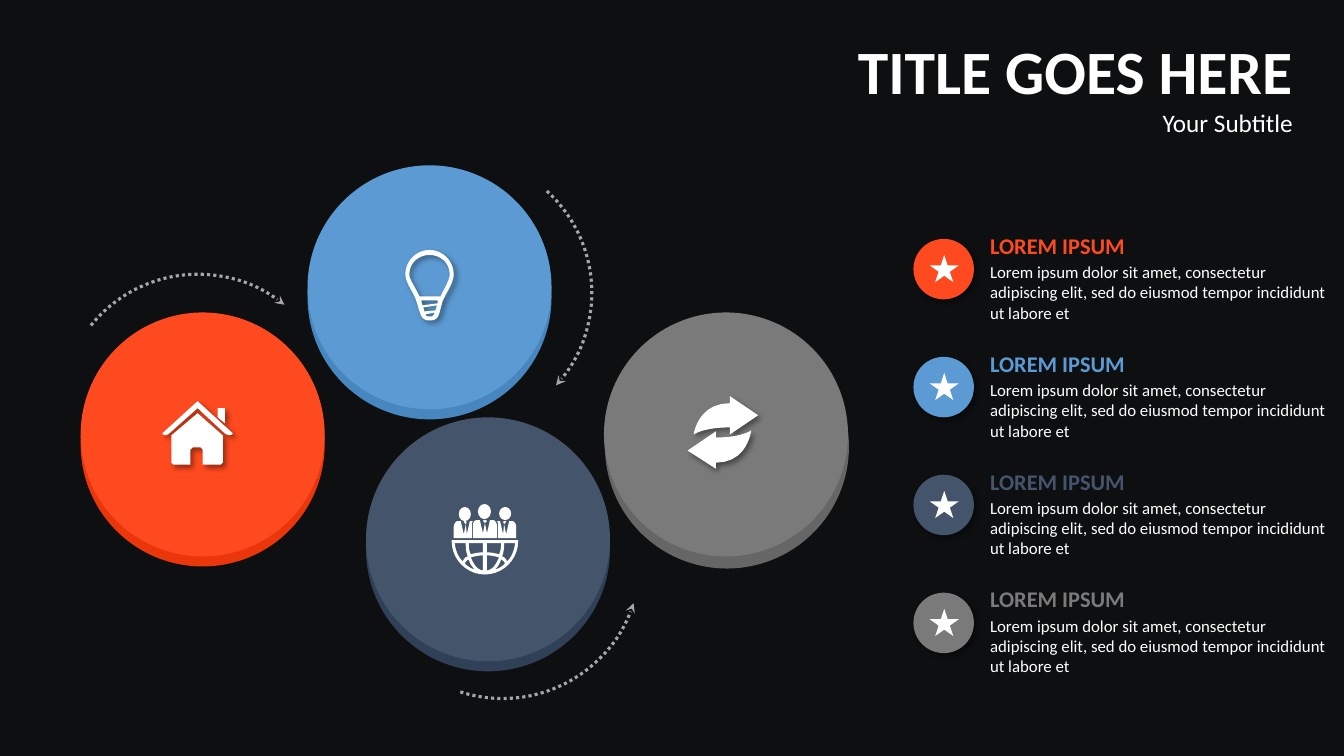
import collections

import lxml.etree
import pptx
import pptx.dml.color
import pptx.enum.dml
import pptx.enum.shapes
import pptx.enum.text
import pptx.oxml.ns
import pptx.util

Inches = pptx.util.Inches
Pt = pptx.util.Pt
qn = pptx.oxml.ns.qn
SHAPES = pptx.enum.shapes.MSO_SHAPE
Box = collections.namedtuple("Box", "left top width height")

COLORS = {
    "background": "0E0F11", "white": "FFFFFF", "arrow": "A6A6A6", "black": "000000",
    "orange": "FE4A1E", "orange_edge": "EA360A",
    "blue": "5C9AD3", "blue_edge": "4886BF",
    "navy": "44546B", "navy_edge": "304057",
    "gray": "7A7A7A", "gray_edge": "666666",
}
FONT = "Calibri"
BODY = ("Lorem ipsum dolor sit amet, consectetur adipiscing elit, "
        "sed do eiusmod tempor incididunt ut labore et")

# Outlines are in hundredths of an inch: pairs are corners, sextuples are Bezier curves.
HOUSE = [
    [(9, 34), (9, 61), (11, 63), (28, 63), (28, 48), (30, 46), (38, 46), (40, 48),
     (40, 63), (58, 63), (60, 61), (60, 34), (35, 12)],
    [(62, 7), (55, 7), (55, 16), (62, 22)],
    [(0, 32), (0, 32, 2, 36, 7, 32), (35, 7), (62, 32), (68, 36, 70, 32, 70, 32), (35, 0)],
]
CYCLE = [
    [(28, 72), (28, 66), (60, 66, 63, 34, 63, 34), (63, 34, 54, 41, 28, 41), (28, 35), (0, 54)],
    [(42, 0), (42, 7), (10, 7, 6, 38, 6, 38), (6, 38, 16, 31, 42, 31), (42, 38), (70, 19)],
]
BULB = [
    [(24, 0), (11, 0, 0, 11, 0, 24), (0, 33, 9, 43, 11, 51), (15, 63, 15, 70, 24, 70),
     (34, 70, 33, 64, 37, 51), (40, 43, 48, 33, 48, 24), (48, 11, 37, 0, 24, 0)],
    [(30, 60), (19, 61), (19, 60, 18, 59, 18, 57), (31, 55), (31, 56, 31, 57, 30, 60)],
    [(17, 55), (17, 54, 16, 53, 16, 50), (32, 50), (32, 53)],
    [(24, 66), (22, 66, 21, 66, 20, 64), (29, 62), (28, 66, 27, 66, 24, 66)],
    [(35, 46), (14, 46), (13, 44, 12, 42, 11, 40), (8, 34, 4, 29, 4, 24),
     (4, 13, 13, 5, 24, 5), (35, 5, 44, 13, 44, 24), (44, 29, 41, 34, 38, 40),
     (37, 42, 36, 44, 35, 46)],
]
GLOBE_RIM = [[(66, 0), (0, 0), (0, 1), (0, 19, 15, 34, 33, 34), (51, 34, 66, 19, 66, 1)]]
GLOBE_CELLS = [
    [(11, 21), (6, 16, 4, 10, 3, 3), (14, 3), (14, 7, 14, 11, 16, 16), (13, 17, 12, 19, 11, 21)],
    [(13, 23), (14, 21, 15, 20, 17, 19), (18, 23, 20, 26, 23, 29), (19, 28, 16, 26, 13, 23)],
    [(31, 30), (25, 29, 22, 24, 19, 17), (23, 16, 27, 15, 31, 15)],
    [(31, 12), (27, 12, 22, 13, 19, 14), (17, 10, 17, 6, 17, 3), (31, 3)],
]
LEADER_SUIT = [[(20, 0), (17, 0), (14, 13), (12, 3), (10, 13), (7, 0), (4, 0),
                (1, 0, 0, 3, 0, 6), (0, 18), (24, 18), (24, 6), (24, 3, 22, 0, 20, 0)]]
LEADER_TIE = [[(14, 1), (13, 0), (11, 0), (10, 1), (12, 3)]]
MEMBER_SUIT = [[(15, 0), (12, 0), (9, 13), (7, 3), (6, 13), (3, 0), (0, 0),
                (1, 1, 1, 3, 1, 5), (1, 17), (19, 17), (19, 6), (19, 3, 17, 0, 15, 0)]]
MEMBER_TIE = [[(9, 1), (9, 0), (7, 0), (6, 1), (7, 3)]]
ICON_WIDTH = 66


def color(name):
    return pptx.dml.color.RGBColor.from_string(COLORS[name])


def move(outlines, right=0, down=0):
    return [[tuple(v + (down if i % 2 else right) for i, v in enumerate(step))
             for step in outline] for outline in outlines]


def mirror(outlines):
    return [[tuple(v if i % 2 else ICON_WIDTH - v for i, v in enumerate(step))
             for step in outline] for outline in outlines]


def flatten(outline):
    points = []
    for step in outline:
        if len(step) == 2:
            points.append(step)
            continue
        x0, y0 = points[-1]
        x1, y1, x2, y2, x3, y3 = step
        for t in (n / 10 for n in range(1, 11)):
            a, b, c, d = (1 - t) ** 3, 3 * t * (1 - t) ** 2, 3 * t * t * (1 - t), t ** 3
            points.append((a * x0 + b * x1 + c * x2 + d * x3,
                           a * y0 + b * y1 + c * y2 + d * y3))
    return [(Inches(x / 100), Inches(y / 100)) for x, y in points]


def paint(shape, fill, shadow=False):
    shape.fill.solid()
    shape.fill.fore_color.rgb = color(fill)
    shape.line.fill.background()
    shape.shadow.inherit = False
    if shadow:
        effects = shape._element.spPr.find(qn("a:effectLst"))
        outer = lxml.etree.SubElement(effects, qn("a:outerShdw"), blurRad="50800",
                                      dist="38100", dir="2700000", algn="tl", rotWithShape="0")
        black = lxml.etree.SubElement(outer, qn("a:srgbClr"), val=COLORS["black"])
        lxml.etree.SubElement(black, qn("a:alpha"), val="40000")


def add_preset(shapes, kind, box, fill, shadow=False):
    shape = shapes.add_shape(kind, *(Inches(length) for length in box))
    paint(shape, fill, shadow)


def add_outline(shapes, left, top, outlines, shadow=False):
    contours = [flatten(outline) for outline in outlines]
    builder = shapes.build_freeform(*contours[0][0], scale=1.0)
    builder.add_line_segments(contours[0][1:], close=True)
    for contour in contours[1:]:
        builder.move_to(*contour[0])
        builder.add_line_segments(contour[1:], close=True)
    paint(builder.convert_to_shape(Inches(left), Inches(top)), "white", shadow)


def add_disc(slide, left, top, name, shift, drop):
    shapes = slide.shapes.add_group_shape().shapes
    size = 2.42
    add_preset(shapes, SHAPES.OVAL, Box(left + shift, top + drop, size, size), name + "_edge")
    add_preset(shapes, SHAPES.OVAL, Box(left, top, size, size), name)


def add_arc_arrow(slide, left, top, rotation, flipped):
    shape = slide.shapes.add_shape(SHAPES.ARC, Inches(left), Inches(top), Inches(2.73), Inches(2.73))
    shape.rotation = rotation
    shape.shadow.inherit = False
    shape.fill.background()
    shape.line.color.rgb = color("arrow")
    shape.line.width = Pt(2.25)
    shape.line.dash_style = pptx.enum.dml.MSO_LINE.ROUND_DOT
    lxml.etree.SubElement(shape.line._get_or_add_ln(), qn("a:tailEnd"), type="stealth")
    if flipped:
        shape._element.spPr.find(qn("a:xfrm")).set("flipH", "1")


def add_team_icon(slide, left, top):
    shapes = slide.shapes.add_group_shape().shapes
    globe = GLOBE_RIM + GLOBE_CELLS + mirror(GLOBE_CELLS)
    member = [move(part, 45, 17) for part in (MEMBER_SUIT, MEMBER_TIE)]
    leader = [move(part, 21, 16) for part in (LEADER_SUIT, LEADER_TIE)]
    for part in [move(globe, 0, 36)] + leader + member + [mirror(part) for part in member]:
        add_outline(shapes, left, top, part)
    for x, y, width, height in ((0.26, 0, 0.13, 0.15), (0.47, 0.03, 0.12, 0.13), (0.07, 0.03, 0.12, 0.14)):
        add_preset(shapes, SHAPES.OVAL, Box(left + x, top + y, width, height), "white")


def add_diagram(slide, box):
    for x, y, name, shift, drop in ((5.39, 1.56, "gray", 0.01, 0.12), (0.2, 1.56, "orange", 0, 0.1),
                                    (2.45, 0.1, "blue", 0, 0.1), (3.03, 2.6, "navy", 0, 0.1)):
        add_disc(slide, box.left + x, box.top + y, name, shift, drop)
    for x, y, rotation, flipped in ((0, 1.18, 308.9, False), (2.54, 0, 42.3, False),
                                    (3.02, 2.66, 197.9, True)):
        add_arc_arrow(slide, box.left + x, box.top + y, rotation, flipped)
    for x, y, icon in ((1.01, 2.44, HOUSE), (3.42, 0.94, BULB), (6.22, 2.39, CYCLE)):
        add_outline(slide.shapes, box.left + x, box.top + y, icon, shadow=True)
    add_team_icon(slide, box.left + 3.88, box.top + 3.46)


def add_text(slide, box, lines, align, margins, gap=0):
    frame = slide.shapes.add_textbox(*(Inches(length) for length in box)).text_frame
    frame.word_wrap = True
    frame.auto_size = pptx.enum.text.MSO_AUTO_SIZE.SHAPE_TO_FIT_TEXT
    frame.margin_left = frame.margin_right = Inches(margins[0])
    frame.margin_top = frame.margin_bottom = Inches(margins[1])
    for index, (text, size, name, bold) in enumerate(lines):
        paragraph = frame.add_paragraph() if index else frame.paragraphs[0]
        paragraph.alignment = align
        if index and gap:
            paragraph.space_before = Pt(gap)
        run = paragraph.add_run()
        run.text = text
        run.font.name, run.font.size, run.font.bold = FONT, Pt(size), bold
        run.font.color.rgb = color(name)


def add_legend(slide, box):
    names = ("orange", "blue", "navy", "gray")
    for index, name in enumerate(names):
        top = box.top + index * box.height / len(names)
        add_text(slide, Box(box.left + 0.69, top, box.width - 0.69, 1),
                 (("LOREM IPSUM", 16, name, True), (BODY, 12, "white", False)),
                 pptx.enum.text.PP_ALIGN.LEFT, (0.07, 0.03), gap=2.4)
        shapes = slide.shapes.add_group_shape().shapes
        add_preset(shapes, SHAPES.OVAL, Box(box.left, top + 0.1, 0.6, 0.6), name, shadow=True)
        add_preset(shapes, SHAPES.STAR_5_POINT, Box(box.left + 0.16, top + 0.26, 0.29, 0.27), "white")


def add_heading(slide, box):
    add_text(slide, box, (("TITLE GOES HERE", 44, "white", True), ("Your Subtitle", 18, "white", False)),
             pptx.enum.text.PP_ALIGN.RIGHT, (0.1, 0.05))


def main():
    presentation = pptx.Presentation()
    presentation.slide_width, presentation.slide_height = Inches(13.33), Inches(7.5)
    slide = presentation.slides.add_slide(presentation.slide_layouts[6])
    slide.background.fill.solid()
    slide.background.fill.fore_color.rgb = color("background")
    add_diagram(slide, Box(0.6, 1.54, 7.82, 5.4))
    add_legend(slide, Box(9.06, 2.27, 4.19, 4.68))
    add_heading(slide, Box(6.9, 0.28, 6.02, 1.14))
    presentation.save("out.pptx")


if __name__ == "__main__":
    main()
